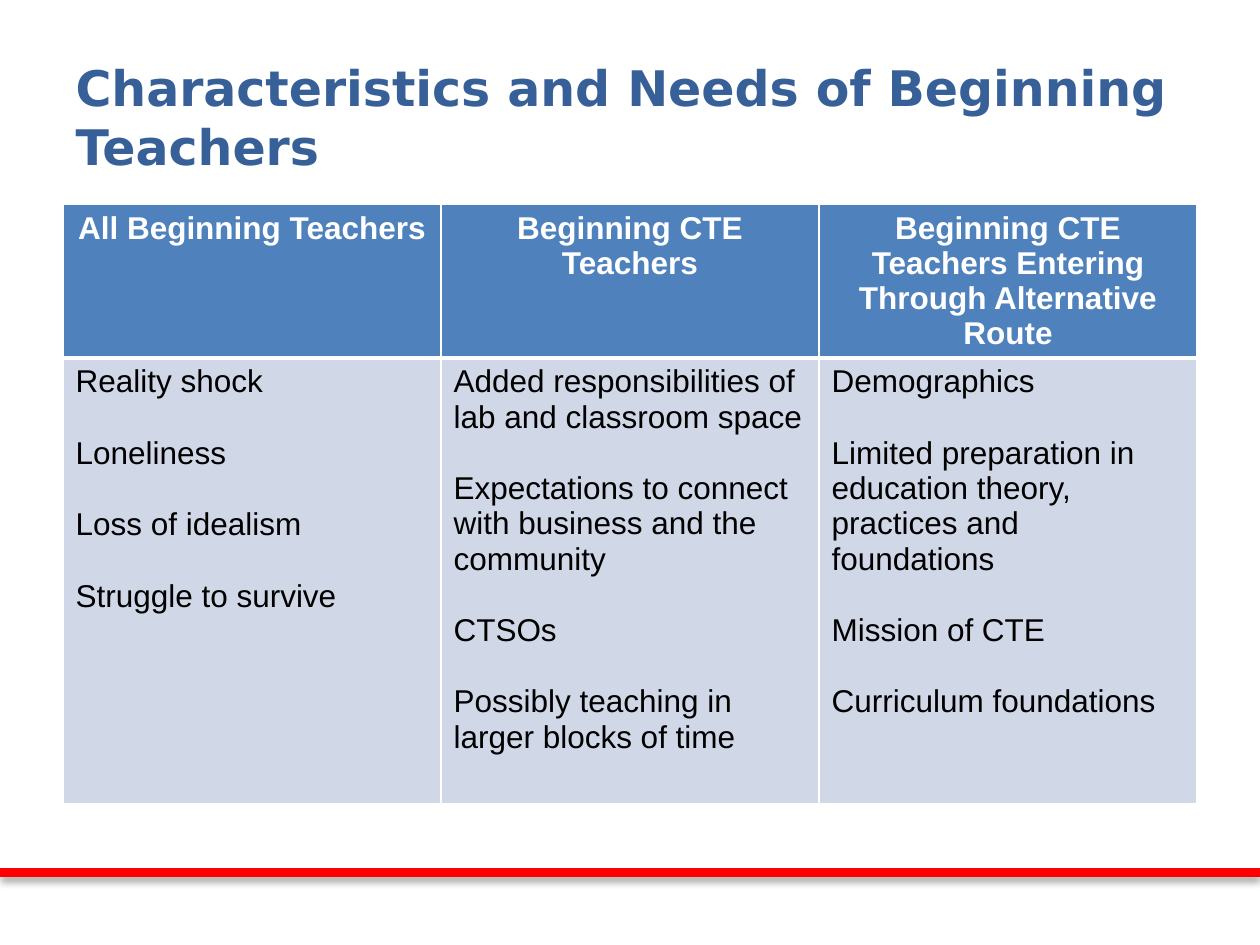
from lxml import etree
from pptx import Presentation
from pptx import util as u
from pptx.dml.color import RGBColor
from pptx.enum import shapes, text
from pptx.oxml import parse_xml
from pptx.oxml.ns import nsdecls, qn

WHITE, BLACK, RED = "FFFFFF", "000000", "FF0000"
TITLE_BLUE, HEADER_BLUE, BODY_BLUE = "376098", "4F81BD", "D0D8E8"

COLUMNS = {
    "All Beginning Teachers": [
        "Reality shock",
        "Loneliness",
        "Loss of idealism",
        "Struggle to survive",
    ],
    "Beginning CTE Teachers": [
        "Added responsibilities of lab and classroom space",
        "Expectations to connect with business and the community",
        "CTSOs",
        "Possibly teaching in larger blocks of time",
    ],
    "Beginning CTE Teachers Entering Through Alternative Route": [
        "Demographics",
        "Limited preparation in education theory, practices and foundations",
        "Mission of CTE",
        "Curriculum foundations",
    ],
}


def rgb(value):
    return RGBColor.from_string(value)


def write(frame, paragraphs, font="Arial", size=18, color=BLACK, bold=False,
          align=text.PP_ALIGN.LEFT, gap=0):
    """Fill a text frame; gap is the space in points between paragraphs."""
    for index, wording in enumerate(paragraphs):
        paragraph = frame.add_paragraph() if index else frame.paragraphs[0]
        paragraph.alignment = align
        if index and gap:
            paragraph.space_before = u.Pt(gap)
        run = paragraph.add_run()
        run.text = wording
        run.font.name, run.font.size, run.font.bold = font, u.Pt(size), bold
        run.font.color.rgb = rgb(color)


def set_borders(cell, color, **widths):
    """Draw the cell edges; widths in points are keyed L, R, T and B."""
    properties = cell._tc.get_or_add_tcPr()
    for index, side in enumerate("LRTB"):
        properties.insert(index, parse_xml(
            f'<a:ln{side} {nsdecls("a")} w="{u.Pt(widths.get(side, 1))}">'
            f'<a:solidFill><a:srgbClr val="{color}"/></a:solidFill></a:ln{side}>'))


class Deck:
    """Style and current slide; lengths are shares of the slide's size."""

    def __init__(self, width=10, height=7.5):
        self.file = Presentation()
        self.file.slide_width = u.Inches(width)
        self.file.slide_height = u.Inches(height)
        self.slide = self.file.slides.add_slide(self.file.slide_layouts[5])

    def x(self, share):
        return round(self.file.slide_width * share)

    def y(self, share):
        return round(self.file.slide_height * share)

    def rule(self, top, color, width):
        line = self.slide.shapes.add_connector(
            shapes.MSO_CONNECTOR.STRAIGHT, 0, self.y(top), self.x(1), self.y(top))
        line.line.color.rgb, line.line.width = rgb(color), u.Pt(width)
        effects = etree.SubElement(line._element.spPr, qn("a:effectLst"))
        effects.append(parse_xml(
            f'<a:outerShdw {nsdecls("a")} blurRad="{u.Pt(4)}" dist="{u.Pt(3)}" '
            f'dir="5400000" rotWithShape="0"><a:srgbClr val="{BLACK}">'
            '<a:alpha val="35000"/></a:srgbClr></a:outerShdw>'))

    def title(self, wording, left, top, width, height):
        heading = self.slide.shapes.title
        heading.left, heading.top = self.x(left), self.y(top)
        heading.width, heading.height = self.x(width), self.y(height)
        frame = heading.text_frame
        frame.word_wrap = True
        frame.auto_size = text.MSO_AUTO_SIZE.NONE
        frame.vertical_anchor = text.MSO_ANCHOR.MIDDLE
        write(frame, [wording], font="DejaVu Sans", size=28, color=TITLE_BLUE, bold=True)

    def table(self, columns, left, top, width, row_heights):
        grid = self.slide.shapes.add_table(
            2, len(columns), self.x(left), self.y(top),
            self.x(width), self.y(sum(row_heights))).table
        grid.horz_banding = False
        for row, share in zip(grid.rows, row_heights):
            row.height = self.y(share)
        for index, (heading, points) in enumerate(columns.items()):
            header, body = grid.cell(0, index), grid.cell(1, index)
            for cell, fill in ((header, HEADER_BLUE), (body, BODY_BLUE)):
                cell.fill.solid()
                cell.fill.fore_color.rgb = rgb(fill)
            set_borders(header, WHITE, B=3)
            set_borders(body, WHITE, T=3)
            write(header.text_frame, [heading], color=WHITE, bold=True,
                  align=text.PP_ALIGN.CENTER)
            write(body.text_frame, points, gap=20.7)


def main():
    deck = Deck()
    deck.rule(0.923, RED, 5)
    deck.title("Characteristics and Needs of Beginning Teachers", 0.05, 0.04, 0.9, 1 / 6)
    deck.table(COLUMNS, 0.05, 0.216, 0.9, (0.162, 0.472))
    deck.file.save("out.pptx")


if __name__ == "__main__":
    main()
